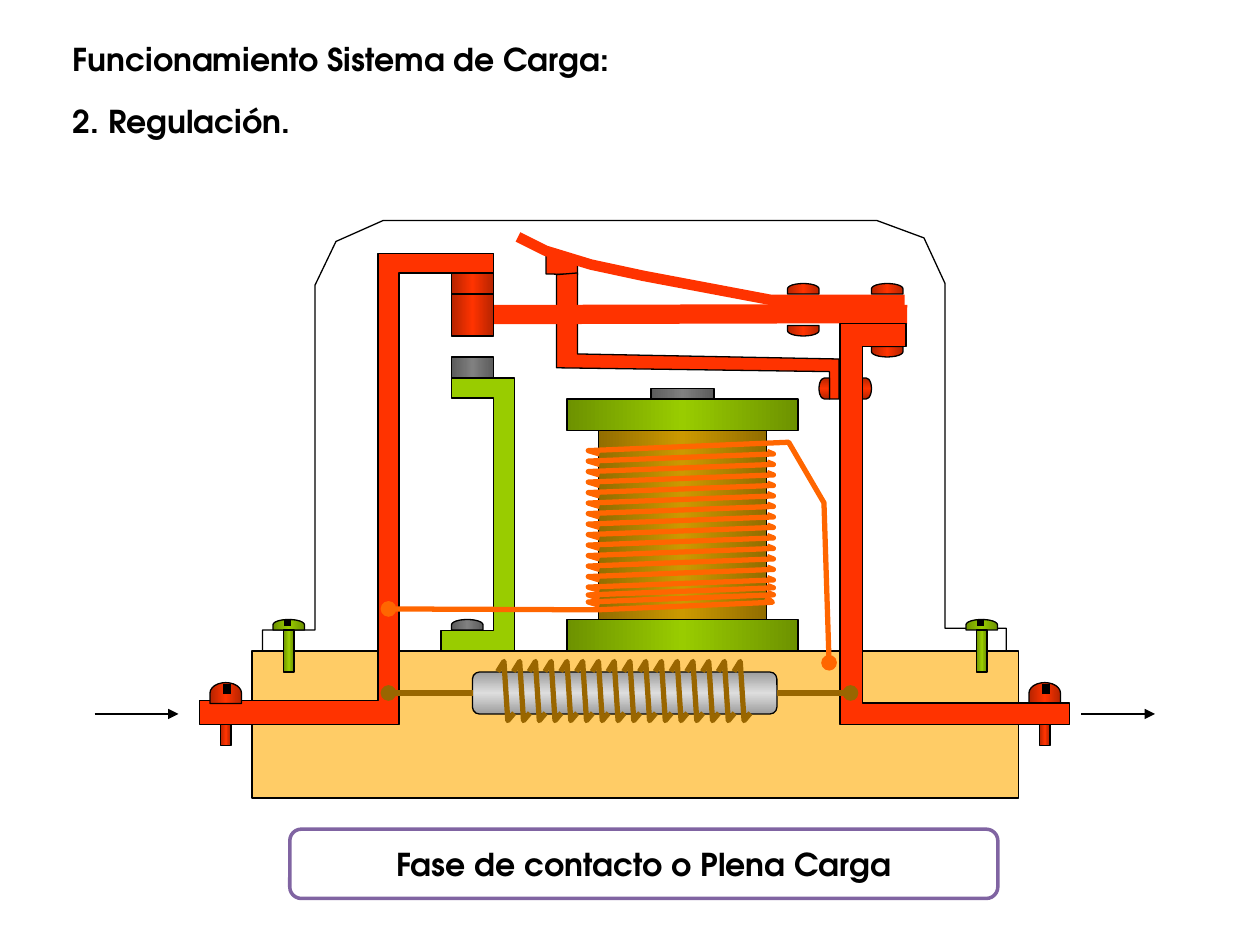
import copy
from dataclasses import dataclass
from typing import Any, Optional, Sequence, Union

import lxml.etree
import pptx
import pptx.dml.color
import pptx.enum.shapes
import pptx.enum.text
import pptx.oxml.ns
import pptx.util

Pt = pptx.util.Pt
qn = pptx.oxml.ns.qn
PRESET = pptx.enum.shapes.MSO_SHAPE
Point = tuple[float, float]


@dataclass(frozen=True)
class Metal:
    edge: str
    middle: str
    angle: int = 0


Paint = Union[str, Metal, None]


@dataclass(frozen=True)
class Block:
    left: float
    top: float
    width: float
    height: float
    paint: Paint
    preset: Any = PRESET.RECTANGLE
    rotation: int = 0
    line: str = "000000"
    weight: float = 0.75


@dataclass(frozen=True)
class Outline:
    points: Sequence[Point]
    paint: Paint = None
    closed: bool = False
    line: str = "000000"
    weight: float = 0.75
    head: Optional[str] = None
    tail: Optional[str] = None


@dataclass(frozen=True)
class Segment:
    start: Point
    end: Point
    line: str = "000000"
    weight: float = 0.75
    tail: Optional[str] = None


@dataclass(frozen=True)
class Screw:
    center_x: float
    head_y: float
    head_height: float
    shank_top: float
    shank_height: float
    slot: tuple[float, float, float]
    metal: Metal


RED, WIRE, WINDING = "FF3300", "FF6600", "996600"
RED_METAL = Metal("B62400", RED)
RED_METAL_SIDE = Metal("B62400", RED, 90)
GREEN_METAL = Metal("6D9200", "99CC00")
GRAY_METAL = Metal("5C5C5C", "808080")
BRASS = Metal("926D00", "CC9900")
STEEL = Metal("9E9E9E", "DDDDDD", 90)

FONT = {"name": "TeX Gyre Adventor", "size": Pt(18), "bold": True}
TITLE_FRAME = {"word_wrap": False, "auto_size": pptx.enum.text.MSO_AUTO_SIZE.SHAPE_TO_FIT_TEXT}
CAPTION_FRAME = {"word_wrap": True, "vertical_anchor": pptx.enum.text.MSO_ANCHOR.MIDDLE}


def color(value: str) -> pptx.dml.color.RGBColor:
    return pptx.dml.color.RGBColor.from_string(value)


def apply_format(target: Any, values: dict) -> None:
    for name, value in values.items():
        setattr(target, name, value)


def paint_shape(shape: Any, paint: Paint) -> None:
    fill = shape.fill
    if paint is None:
        fill.background()
    elif isinstance(paint, str):
        fill.solid()
        fill.fore_color.rgb = color(paint)
    else:
        fill.gradient()
        fill.gradient_angle = paint.angle
        gradient = shape._element.spPr.find(qn("a:gradFill"))
        gradient.set("rotWithShape", "0")
        stops = gradient.find(qn("a:gsLst"))
        stops.append(copy.deepcopy(stops[0]))
        tones = (paint.edge, paint.middle, paint.edge)
        for stop, tone, position in zip(fill.gradient_stops, tones, (0, 0.5, 1)):
            stop.color.rgb = color(tone)
            stop.position = position


def style_line(shape: Any, line: str, weight: float,
               head: Optional[str] = None, tail: Optional[str] = None) -> None:
    shape.line.color.rgb = color(line)
    shape.line.width = Pt(weight)
    properties = shape._element.spPr.find(qn("a:ln"))
    for tag, kind in (("a:headEnd", head), ("a:tailEnd", tail)):
        if kind:
            lxml.etree.SubElement(properties, qn(tag), type=kind)


def draw_block(shapes: Any, block: Block) -> Any:
    shape = shapes.add_shape(block.preset, Pt(block.left), Pt(block.top),
                             Pt(block.width), Pt(block.height))
    shape.rotation = block.rotation
    shape.shadow.inherit = False
    paint_shape(shape, block.paint)
    style_line(shape, block.line, block.weight)
    return shape


def draw_outline(shapes: Any, outline: Outline) -> None:
    points = [(Pt(x), Pt(y)) for x, y in outline.points]
    builder = shapes.build_freeform(*points[0])
    builder.add_line_segments(points[1:], close=outline.closed)
    shape = builder.convert_to_shape()
    shape.shadow.inherit = False
    paint_shape(shape, outline.paint)
    style_line(shape, outline.line, outline.weight, outline.head, outline.tail)


def draw_segment(shapes: Any, segment: Segment) -> Any:
    connector = shapes.add_connector(pptx.enum.shapes.MSO_CONNECTOR.STRAIGHT,
                                     *(Pt(value) for value in segment.start + segment.end))
    style_line(connector, segment.line, segment.weight, tail=segment.tail)
    lxml.etree.SubElement(connector._element.spPr, qn("a:effectLst"))
    return connector


def draw_head(shapes: Any, center_x: float, center_y: float, metal: Metal,
              rotation: int = 270, thickness: float = 6, span: float = 18) -> None:
    draw_block(shapes, Block(center_x - thickness / 2, center_y - span / 2, thickness, span,
                             metal, PRESET.FLOWCHART_DELAY, rotation))


def draw_screw(shapes: Any, screw: Screw) -> None:
    group = shapes.add_group_shape().shapes
    draw_head(group, screw.center_x, screw.head_y, screw.metal, thickness=screw.head_height)
    draw_block(group, Block(screw.center_x - 3, screw.shank_top, 6, screw.shank_height, screw.metal))
    offset, top, bottom = screw.slot
    x = screw.center_x + offset
    draw_segment(group, Segment((x, top), (x, bottom), weight=4.5))


def write_text(shape: Any, text: str, frame_format: dict) -> Any:
    apply_format(shape.text_frame, frame_format)
    paragraph = shape.text_frame.paragraphs[0]
    run = paragraph.add_run()
    run.text = text
    apply_format(run.font, FONT)
    run.font.color.rgb = color("000000")
    return paragraph


def draw_coil(shapes: Any) -> None:
    group = shapes.add_group_shape().shapes
    draw_outline(group, Outline([(222, 348), (341.3, 348.5), (441.4, 344.2), (437.8, 341.3)],
                                line=WIRE, weight=3, head="oval"))
    for top in [338.5, 334.5, *range(330, 257, -6)]:
        turn = [(342.6, top + 7.4), (336.2, top + 5.5), (442, top + 1.4), (438.4, top)]
        draw_outline(group, Outline(turn, line=WIRE, weight=3))
    draw_outline(group, Outline([(342.6, 259.4), (336.2, 257.5), (450.7, 252.7), (470.9, 287.3),
                                 (473.8, 378.7)], line=WIRE, weight=3, tail="oval"))


def draw_resistor(shapes: Any) -> None:
    body = draw_block(shapes, Block(270, 384, 174, 24, STEEL, PRESET.ROUNDED_RECTANGLE))
    group = shapes.add_group_shape().shapes
    for site, start_x, end_x in ((1, 270, 222), (3, 444, 486)):
        lead = draw_segment(group, Segment((start_x, 396), (end_x, 396), WINDING, 3, "oval"))
        lead.begin_connect(body, site)
    for index in range(16):
        x = 284.4 + 9 * index
        turn = [(x, 383.8), (x + 3.6, 378), (x + 5.8, 411.8), (x + 9.4, 407.5)]
        draw_outline(group, Outline(turn, line=WINDING, weight=3))


def draw_regulator(shapes: Any) -> None:
    draw_block(shapes, Block(144, 372, 438, 84, "FFCC66"))
    support = shapes.add_group_shape().shapes
    draw_outline(support, Outline([(258, 216), (294, 216), (294, 372), (252, 372), (252, 360.5),
                                   (282, 360.5), (282, 227.5), (258, 227.5)], "99CC00", True))
    draw_block(support, Block(258, 204, 24, 12, GRAY_METAL))
    draw_head(support, 267, 357, GRAY_METAL)
    draw_outline(shapes, Outline([(150, 372), (150, 360), (180, 360), (180, 163), (192, 138),
                                  (219, 126), (501, 126), (528, 136), (540, 162), (540, 359),
                                  (575, 359), (575, 372)]))
    draw_outline(shapes, Outline([(282, 144.7), (216, 144.7), (216, 400.3), (114, 400.3), (114, 414),
                                  (228, 414), (228, 156), (282, 156)], RED, True))
    draw_block(shapes, Block(258, 156, 24, 12, RED_METAL))
    for center_x in (129, 597):
        draw_screw(shapes, Screw(center_x, 396, 12, 414, 12, (0.5, 391, 396.8), RED_METAL))
    draw_head(shapes, 459, 189, RED_METAL, 90)
    draw_block(shapes, Block(342, 246, 96, 108, BRASS))
    flanges = shapes.add_group_shape().shapes
    for top in (228, 354):
        draw_block(flanges, Block(324, top, 132, 18, GREEN_METAL))
    draw_block(shapes, Block(372, 222, 36, 6, GRAY_METAL))
    draw_coil(shapes)
    draw_outline(shapes, Outline([(312, 144), (312, 156.5), (330, 157), (330, 150)], RED, True))
    draw_outline(shapes, Outline([(318, 157), (330, 156), (330, 202.3), (479.5, 205.2), (479.5, 228),
                                  (474, 228), (474, 212.4), (318, 210.2)], RED, True))
    draw_outline(shapes, Outline([(296, 135.4), (311.8, 143.3), (337.7, 151.2), (367.9, 157.7),
                                  (440.6, 171.4), (517, 171.4)], line=RED, weight=6))
    for center_x, center_y, rotation in ((507, 165, 270), (459, 165, 270), (507, 201, 90)):
        draw_head(shapes, center_x, center_y, RED_METAL, rotation)
    for center_x, rotation in ((471, 180), (495, 0)):
        draw_head(shapes, center_x, 222, RED_METAL_SIDE, rotation, span=12)
    for center_x in (165, 561):
        draw_screw(shapes, Screw(center_x, 357, 6, 360, 24, (-0.7, 353.5, 357.8), GREEN_METAL))
    draw_outline(shapes, Outline([(282, 179.8), (481, 179.3), (518.4, 179.8)], line=RED, weight=11))
    draw_outline(shapes, Outline([(517.7, 185), (517.7, 198), (493, 198), (493, 401.8), (611.3, 401.8),
                                  (611.3, 414), (480, 414), (480, 185)], RED, True))
    draw_block(shapes, Block(258, 168, 24, 24, RED_METAL))
    draw_resistor(shapes)
    for start_x, end_x in ((54, 102), (618, 660)):
        draw_segment(shapes, Segment((start_x, 408), (end_x, 408), tail="triangle"))


def main() -> None:
    presentation = pptx.Presentation()
    presentation.slide_width, presentation.slide_height = Pt(720), Pt(540)
    shapes = presentation.slides.add_slide(presentation.slide_layouts[6]).shapes
    titles = (("Funcionamiento Sistema de Carga:", 19.4, 322), ("2. Regulación.", 54.7, 144.7))
    for text, top, width in titles:
        write_text(shapes.add_textbox(Pt(34.5), Pt(top), Pt(width), Pt(29)), text, TITLE_FRAME)
    draw_regulator(shapes)
    caption = draw_block(shapes, Block(165.6, 473.8, 404.6, 39.6, "FFFFFF", PRESET.ROUNDED_RECTANGLE,
                                       line="8064A2", weight=2))
    paragraph = write_text(caption, "Fase de contacto o Plena Carga", CAPTION_FRAME)
    paragraph.alignment = pptx.enum.text.PP_ALIGN.CENTER
    presentation.save("out.pptx")


if __name__ == "__main__":
    main()
